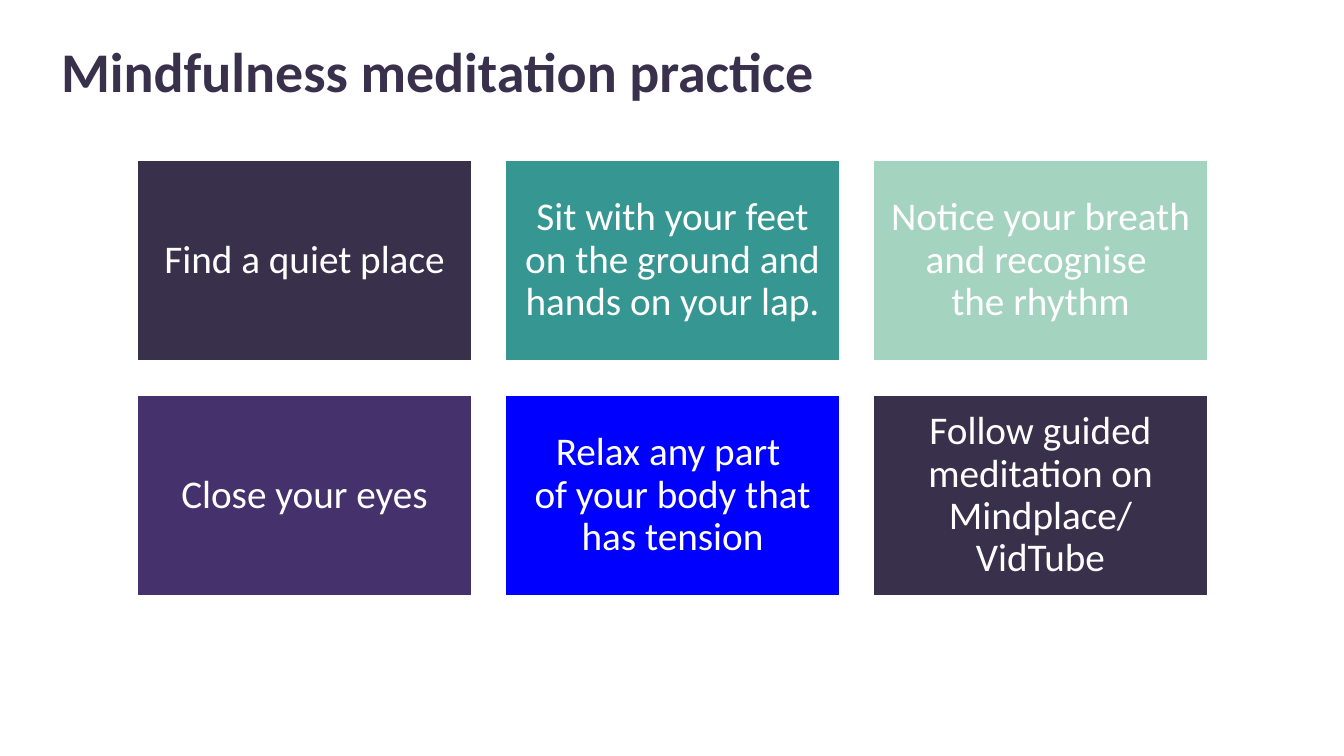
"""Build the mindfulness meditation practice slide."""
from pptx import Presentation, util as u
from pptx.dml.color import RGBColor
from pptx.enum import shapes, text

INK = RGBColor(0x39, 0x30, 0x4C)
TEAL = RGBColor(0x36, 0x96, 0x91)
MINT = RGBColor(0xA4, 0xD3, 0xBF)
PLUM = RGBColor(0x45, 0x32, 0x6C)
BLUE = RGBColor(0x00, 0x00, 0xFF)
WHITE = RGBColor(0xFF, 0xFF, 0xFF)

TITLE = "Mindfulness meditation practice"
STEPS = [
    ("Find a quiet place", INK),
    ("Sit with your feet on the ground and hands on your lap.", TEAL),
    ("Notice your breath and recognise \nthe rhythm", MINT),
    ("Close your eyes", PLUM),
    ("Relax any part \nof your body that has tension", BLUE),
    ("Follow guided meditation on Mindplace/\nVidTube", INK),
]
COLS = 3
LEFT, TOP = 137, 160
WIDE, HIGH = 335, 201
STEP_X, STEP_Y = 368, 235
INSET = 12


def px(n):
    return u.Inches(n / 100.8)


def place(shape, x, y, w, h):
    shape.left, shape.top, shape.width, shape.height = map(px, (x, y, w, h))


def write(shape, words, size, color, align, bold=False):
    frame = shape.text_frame
    frame.word_wrap = True
    frame.auto_size = text.MSO_AUTO_SIZE.NONE
    frame.vertical_anchor = text.MSO_ANCHOR.MIDDLE
    para = frame.paragraphs[0]
    para.text = words
    para.alignment = align
    para.line_spacing = 0.9
    for run in para.runs:
        font = run.font
        font.name, font.size, font.bold = "Calibri", u.Pt(size), bold
        font.color.rgb = color
    return frame


def main():
    deck = Presentation()
    deck.slide_width, deck.slide_height = px(1344), px(756)
    slide = deck.slides.add_slide(deck.slide_layouts[5])
    title = slide.shapes.title
    place(title, 51, 40, 1159, 69)
    write(title, TITLE, 40, INK, text.PP_ALIGN.LEFT, True)

    for i, (words, fill) in enumerate(STEPS):
        row, col = divmod(i, COLS)
        box = slide.shapes.add_shape(
            shapes.MSO_SHAPE.RECTANGLE, px(LEFT + col * STEP_X),
            px(TOP + row * STEP_Y), px(WIDE), px(HIGH))
        box.shadow.inherit = False
        box.fill.solid()
        box.fill.fore_color.rgb = fill
        box.line.color.rgb = WHITE
        box.line.width = u.Pt(1)
        frame = write(box, words, 28, WHITE, text.PP_ALIGN.CENTER)
        frame.margin_left = frame.margin_right = px(INSET)
        frame.margin_top = frame.margin_bottom = px(INSET)

    deck.save("out.pptx")


if __name__ == "__main__":
    main()
